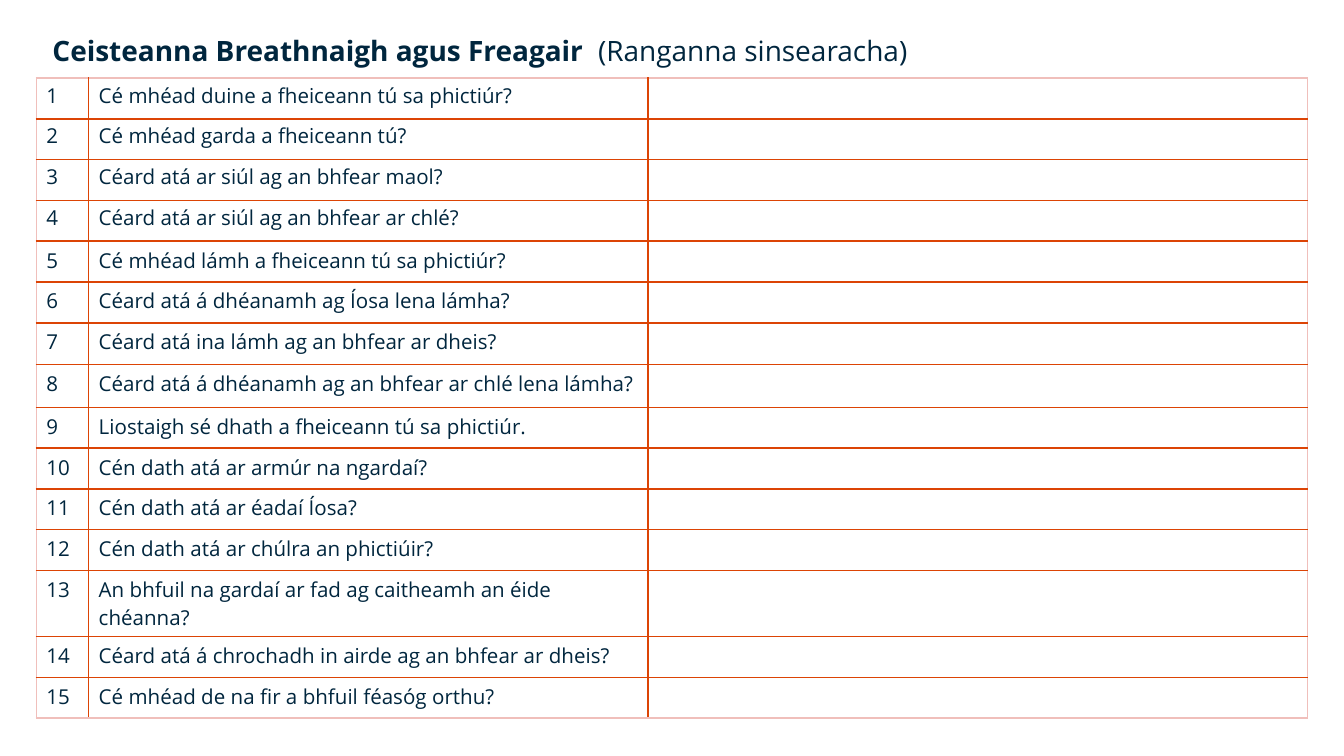
from lxml import etree
from pptx import Presentation
from pptx.dml.color import RGBColor
from pptx.enum import text
from pptx.oxml.ns import qn
from pptx.util import Inches, Pt

COLOURS = {"ink": "00263E", "grid": "DC4405", "frame": "F0BFBB"}
QUESTIONS = [
    "Cé mhéad duine a fheiceann tú sa phictiúr?",
    "Cé mhéad garda a fheiceann tú?",
    "Céard atá ar siúl ag an bhfear maol?",
    "Céard atá ar siúl ag an bhfear ar chlé?",
    "Cé mhéad lámh a fheiceann tú sa phictiúr?",
    "Céard atá á dhéanamh ag Íosa lena lámha?",
    "Céard atá ina lámh ag an bhfear ar dheis?",
    "Céard atá á dhéanamh ag an bhfear ar chlé lena lámha?",
    "Liostaigh sé dhath a fheiceann tú sa phictiúr.",
    "Cén dath atá ar armúr na ngardaí?",
    "Cén dath atá ar éadaí Íosa?",
    "Cén dath atá ar chúlra an phictiúir?",
    "An bhfuil na gardaí ar fad ag caitheamh an éide chéanna?",
    "Céard atá á chrochadh in airde ag an bhfear ar dheis?",
    "Cé mhéad de na fir a bhfuil féasóg orthu?",
]
COLUMN_WIDTHS = [0.39, 4.16, 4.91]
TABLE_HEIGHT = 4.72
ROWS_HEIGHT = 4.58
SPECIAL_HEIGHTS = {7: 0.31, 8: 0.32}
TIGHT_ROWS = 4


class Worksheet:
    """Holds the text style and the current page."""

    font_name = "Open Sans"

    def __init__(self, page):
        self.page = page

    def style(self, font, size):
        font.name = self.font_name
        font.size = Pt(size)
        font.color.rgb = RGBColor.from_string(COLOURS["ink"])

    def title(self, heading, audience):
        box = self.page.shapes.title
        box.left, box.top, box.width, box.height = map(Inches, (0.29, 0.2, 9.59, 0.35))
        frame = box.text_frame
        frame.word_wrap = True
        frame.auto_size = text.MSO_AUTO_SIZE.NONE
        frame.vertical_anchor = text.MSO_ANCHOR.MIDDLE
        para = frame.paragraphs[0]
        para.alignment = text.PP_ALIGN.LEFT
        for words, bold in ((heading, True), (audience, False)):
            span = para.add_run()
            span.text = words
            self.style(span.font, 15)
            span.font.bold = bold

    def question_table(self, questions):
        rows, columns = len(questions), len(COLUMN_WIDTHS)
        holder = self.page.shapes.add_table(
            rows, columns, Inches(0.27), Inches(0.58),
            Inches(sum(COLUMN_WIDTHS)), Inches(TABLE_HEIGHT))
        table = holder.table
        table.first_row = table.horz_banding = False
        for column, width in zip(table.columns, COLUMN_WIDTHS):
            column.width = Inches(width)
        plain_height = ((ROWS_HEIGHT - sum(SPECIAL_HEIGHTS.values()))
                        / (rows - len(SPECIAL_HEIGHTS)))
        for r, question in enumerate(questions):
            table.rows[r].height = Inches(SPECIAL_HEIGHTS.get(r + 1, plain_height))
            for c, words in enumerate((str(r + 1), question, "")):
                cell = table.cell(r, c)
                self.fill_cell(cell, words, tight=r < TIGHT_ROWS)
                self.border_cell(cell, {"L": c == 0, "R": c == columns - 1,
                                        "T": r == 0, "B": r == rows - 1})
        # Room for the question that takes two lines.
        holder.height = Inches(TABLE_HEIGHT)

    def fill_cell(self, cell, words, tight):
        cell.margin_left = cell.margin_right = Pt(5.4)
        cell.margin_top = cell.margin_bottom = Pt(2.7)
        para = cell.text_frame.paragraphs[0]
        self.style(para.font, 11)
        if words:
            para.text = words
            if tight:
                para.line_spacing = 0.9
                para.space_before = Pt(10)
        else:
            # An empty cell takes its line height from the end mark.
            etree.SubElement(para._p, qn("a:endParaRPr"), sz="1100")

    def border_cell(self, cell, outer_sides):
        """Draw the four sides, pale where they form the table's frame."""
        properties = cell._tc.get_or_add_tcPr()
        for side, outer in outer_sides.items():
            line = etree.SubElement(properties, qn(f"a:ln{side}"), w=str(Pt(1)))
            fill = etree.SubElement(line, qn("a:solidFill"))
            etree.SubElement(fill, qn("a:srgbClr"),
                             val=COLOURS["frame" if outer else "grid"])
        cell.fill.background()


def main():
    deck = Presentation()
    deck.slide_width = Inches(10)
    deck.slide_height = deck.slide_width * 9 // 16
    title_only = deck.slide_layouts[5]
    sheet = Worksheet(deck.slides.add_slide(title_only))
    sheet.title("Ceisteanna Breathnaigh agus Freagair  ", "(Ranganna sinsearacha)")
    sheet.question_table(QUESTIONS)
    deck.save("out.pptx")


if __name__ == "__main__":
    main()
